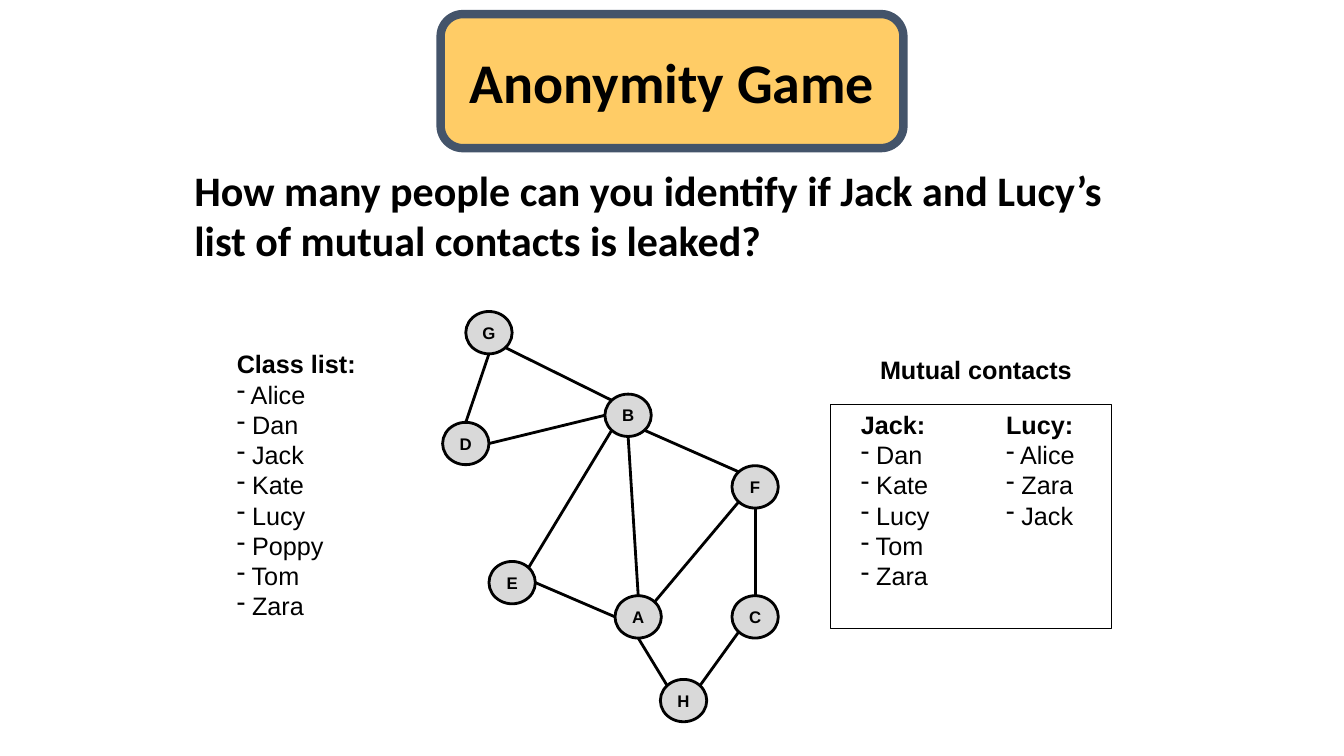
from lxml import etree
from pptx import Presentation
from pptx.dml.color import RGBColor
from pptx.enum.shapes import MSO_CONNECTOR, MSO_SHAPE
from pptx.enum.text import MSO_ANCHOR, PP_ALIGN
from pptx.oxml.ns import qn
from pptx.util import Inches, Pt

ROUNDED, OVAL, RECTANGLE = MSO_SHAPE.ROUNDED_RECTANGLE, MSO_SHAPE.OVAL, MSO_SHAPE.RECTANGLE
STRAIGHT = MSO_CONNECTOR.STRAIGHT
LEFT, CENTER = PP_ALIGN.LEFT, PP_ALIGN.CENTER
TOP, MIDDLE = MSO_ANCHOR.TOP, MSO_ANCHOR.MIDDLE
BLACK = RGBColor(0x00, 0x00, 0x00)
GRAY = RGBColor(0xD9, 0xD9, 0xD9)
GOLD = RGBColor(0xFF, 0xCC, 0x66)
SLATE = RGBColor(0x44, 0x54, 0x6A)

TITLE = "Anonymity Game"
TITLE_BOX = (4.37, 0.14, 4.59, 1.33)
QUESTION = "How many people can you identify if Jack and Lucy’s list of mutual contacts is leaked?"
QUESTION_BOX = (1.83, 1.58, 9.58, 1.11)
CONTACTS_HEADING = "Mutual contacts"
CONTACTS_HEADING_BOX = (8.63, 3.47, 2.12, 0.4)
CONTACTS_FRAME = (8.24, 4.01, 2.78, 2.22)
NAME_LISTS = [
    ("Class list:", ["Alice", "Dan", "Jack", "Kate", "Lucy", "Poppy", "Tom", "Zara"],
     (2.25, 3.41, 1.39, 3.13)),
    ("Jack:", ["Dan", "Kate", "Lucy", "Tom", "Zara"], (8.44, 4.01, 0.89, 2.52)),
    ("Lucy:", ["Alice", "Zara", "Jack"], (9.88, 4.01, 0.89, 1.31)),
]

NODE_WIDTH, NODE_HEIGHT = 0.46, 0.42
NODES = {
    "A": (6.1, 5.91), "B": (6, 3.91), "C": (7.26, 5.91), "D": (4.39, 4.19),
    "E": (4.85, 5.57), "F": (7.26, 4.62), "G": (4.62, 3.09), "H": (6.55, 6.74),
}
DIAGONAL = 0.71
SITES = {
    "n": (0, -1), "s": (0, 1), "w": (-1, 0), "e": (1, 0),
    "nw": (-DIAGONAL, -DIAGONAL), "ne": (DIAGONAL, -DIAGONAL),
    "sw": (-DIAGONAL, DIAGONAL), "se": (DIAGONAL, DIAGONAL),
}
EDGES = [
    ("F", "nw", "B", "se"), ("A", "ne", "F", "sw"), ("B", "nw", "G", "se"),
    ("A", "n", "B", "s"), ("B", "w", "D", "e"), ("G", "s", "D", "n"),
    ("E", "ne", "B", "sw"), ("C", "n", "F", "s"), ("H", "ne", "C", "sw"),
    ("A", "w", "E", "e"), ("H", "nw", "A", "s"),
]


def inches(box):
    return [Inches(length) for length in box]


def set_line(line, color, width):
    line.color.rgb = color
    line.width = Pt(width)


def add_outlined(shapes, kind, box, fill, line, width):
    outlined = shapes.add_shape(kind, *inches(box))
    outlined.shadow.inherit = False
    if fill is None:
        outlined.fill.background()
    else:
        outlined.fill.solid()
        outlined.fill.fore_color.rgb = fill
    set_line(outlined.line, line, width)
    return outlined


def write(frame, lines, size, font, align=LEFT, anchor=TOP, wrap=False, inset=(0.1, 0.05)):
    side, edge = inches(inset)
    layout = {"word_wrap": wrap, "vertical_anchor": anchor, "margin_left": side,
              "margin_right": side, "margin_top": edge, "margin_bottom": edge}
    for name, value in layout.items():
        setattr(frame, name, value)
    for index, text in enumerate(lines):
        paragraph = frame.paragraphs[0] if index == 0 else frame.add_paragraph()
        paragraph.alignment = align
        run = paragraph.add_run()
        run.text = text if index == 0 else f" {text}"
        style = {"size": Pt(size), "name": font, "bold": index == 0}
        for name, value in style.items():
            setattr(run.font, name, value)
        run.font.color.rgb = BLACK
        if index:
            properties = paragraph._p.get_or_add_pPr()
            etree.SubElement(properties, qn("a:buFontTx"))
            etree.SubElement(properties, qn("a:buChar"), char="-")


def add_text(shapes, box, *args, **options):
    write(shapes.add_textbox(*inches(box)).text_frame, *args, **options)


def site_point(node, site):
    left, top = NODES[node]
    across, down = SITES[site]
    return inches((left + NODE_WIDTH * (1 + across) / 2, top + NODE_HEIGHT * (1 + down) / 2))


def add_network(slide):
    network = slide.shapes.add_group_shape().shapes
    for start, start_site, end, end_site in EDGES:
        edge = network.add_connector(
            STRAIGHT, *site_point(start, start_site), *site_point(end, end_site))
        set_line(edge.line, BLACK, 2)
        etree.SubElement(edge._element.spPr, qn("a:effectLst"))
    for letter, corner in NODES.items():
        node = add_outlined(network, OVAL, (*corner, NODE_WIDTH, NODE_HEIGHT), GRAY, BLACK, 2)
        write(node.text_frame, [letter], 12, "Arial", CENTER, MIDDLE, inset=(0, 0))


def add_title(slide):
    add_outlined(slide.shapes, ROUNDED, TITLE_BOX, GOLD, SLATE, 6)
    title = slide.shapes.title
    title.left, title.top, title.width, title.height = inches(TITLE_BOX)
    write(title.text_frame, [TITLE], 40, "Calibri", CENTER, MIDDLE)
    title.element.getparent().append(title.element)


def main():
    deck = Presentation()
    deck.slide_width, deck.slide_height = inches((13.33, 7.5))
    slide = deck.slides.add_slide(deck.slide_layouts[5])
    add_title(slide)
    add_text(slide.shapes, QUESTION_BOX, [QUESTION], 30, "Calibri", wrap=True)
    add_network(slide)
    add_outlined(slide.shapes, RECTANGLE, CONTACTS_FRAME, None, BLACK, 0.5)
    add_text(slide.shapes, CONTACTS_HEADING_BOX, [CONTACTS_HEADING], 18, "Arial")
    for heading, names, box in NAME_LISTS:
        add_text(slide.shapes, box, [heading, *names], 18, "Arial")
    deck.save("out.pptx")


if __name__ == "__main__":
    main()
